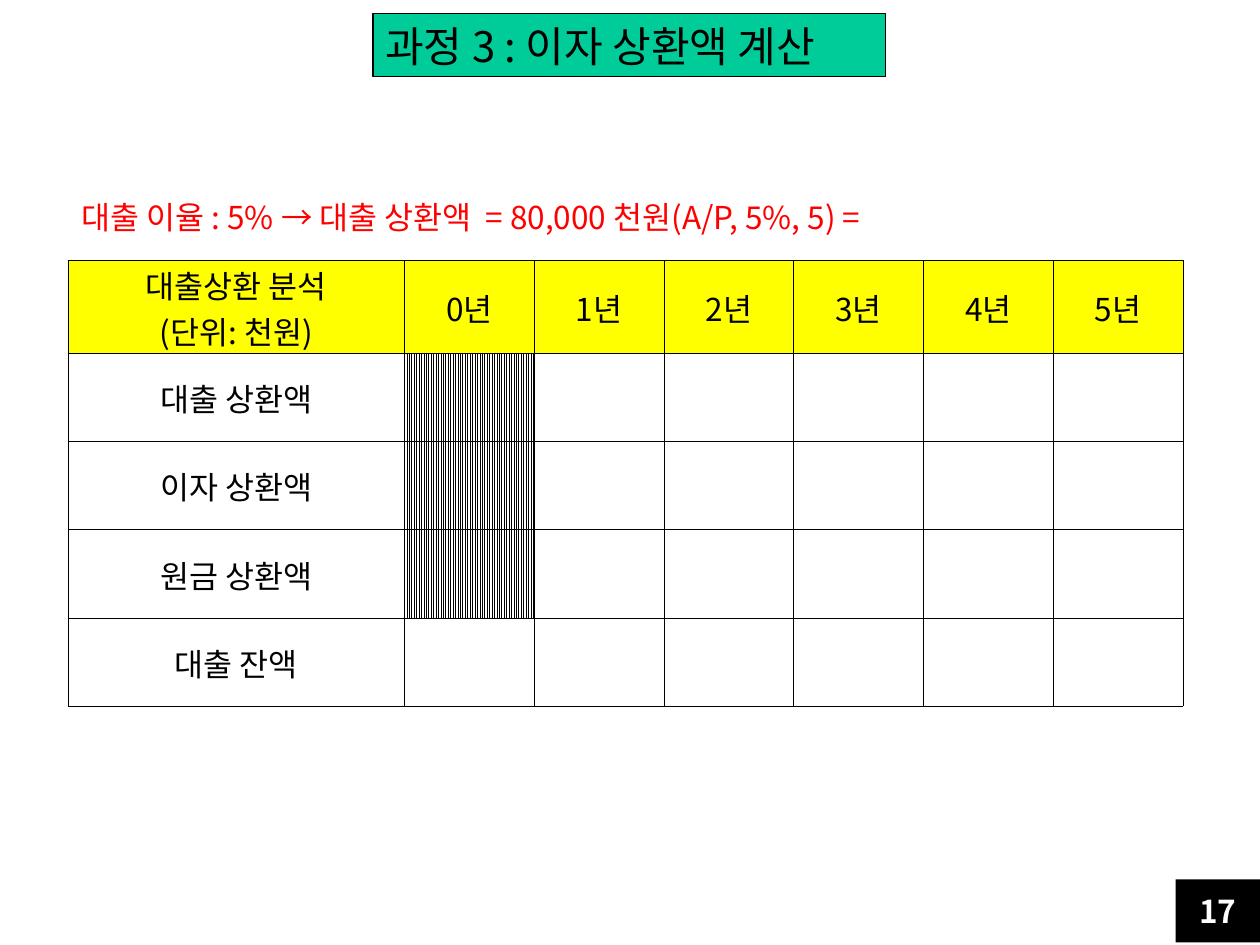
from pptx import Presentation
from pptx.dml.color import RGBColor
from pptx.enum.dml import MSO_PATTERN
from pptx.enum.shapes import MSO_SHAPE
from pptx.enum.text import MSO_ANCHOR, PP_ALIGN
from pptx.oxml import parse_xml
from pptx.oxml.ns import nsdecls
from pptx.util import Inches, Pt

FONT = "Noto Sans CJK KR"
BLACK = RGBColor(0x00, 0x00, 0x00)
WHITE = RGBColor(0xFF, 0xFF, 0xFF)
RED = RGBColor(0xFF, 0x00, 0x00)
YELLOW = RGBColor(0xFF, 0xFF, 0x00)
GREEN = RGBColor(0x00, 0xCC, 0x99)

YEARS = [f"{year}년" for year in range(6)]
HEADER = ["대출상환 분석\n(단위: 천원)"] + YEARS
ITEMS = ["대출 상환액", "이자 상환액", "원금 상환액", "대출 잔액"]
LABEL_WIDTH, YEAR_WIDTH, ROW_HEIGHT = 2.67, 1.03, 0.7


def write(frame, text, color=BLACK, size=18, align=PP_ALIGN.CENTER, bold=False):
    """Write one paragraph for each line of text."""
    for index, line in enumerate(text.split("\n")):
        para = frame.add_paragraph() if index else frame.paragraphs[0]
        para.alignment = align
        span = para.add_run()
        span.text = line
        font = span.font
        font.name, font.size, font.bold = FONT, Pt(size), bold
        font.color.rgb = color
        span._r.get_or_add_rPr().append(
            parse_xml(f'<a:ea {nsdecls("a")} typeface="{FONT}"/>'))


def add_panel(page, box, fill, outlined=False):
    """Add a filled rectangle and return its text frame."""
    panel = page.shapes.add_shape(MSO_SHAPE.RECTANGLE, *map(Inches, box))
    panel.shadow.inherit = False
    panel.fill.solid()
    panel.fill.fore_color.rgb = fill
    if outlined:
        panel.line.color.rgb = BLACK
        panel.line.width = Pt(0.75)
    else:
        panel.line.fill.background()
    return panel.text_frame


def add_title(page, box):
    frame = add_panel(page, box, GREEN, outlined=True)
    frame.vertical_anchor = MSO_ANCHOR.TOP
    write(frame, "과정 3 : 이자 상환액 계산", size=24, align=PP_ALIGN.LEFT)


def add_formula(page, box):
    frame = page.shapes.add_textbox(*map(Inches, box)).text_frame
    frame.word_wrap = True
    write(frame, "대출 이율 : 5% → 대출 상환액  = 80,000 천원(A/P, 5%, 5) =",
          color=RED, align=PP_ALIGN.LEFT)
    frame.paragraphs[0].line_spacing = 0.9


def add_page_number(page, box):
    frame = add_panel(page, box, BLACK)
    frame.vertical_anchor = MSO_ANCHOR.MIDDLE
    write(frame, "17", color=WHITE, bold=True)


def outline_cell(cell):
    """Draw a thin black border on all four sides."""
    properties = cell._tc.get_or_add_tcPr()
    for index, side in enumerate(("lnL", "lnR", "lnT", "lnB")):
        properties.insert(index, parse_xml(
            f'<a:{side} {nsdecls("a")} w="{Pt(0.5)}"><a:solidFill>'
            f'<a:srgbClr val="{BLACK}"/></a:solidFill></a:{side}>'))


def fill_cell(cell, row, column):
    """Yellow header, hatched year 0 for the payments, the rest clear."""
    fill = cell.fill
    if row == 0:
        fill.solid()
        fill.fore_color.rgb = YELLOW
    elif column == 1 and row < len(ITEMS):
        fill.patterned()
        fill.pattern = MSO_PATTERN.LIGHT_VERTICAL
        fill.fore_color.rgb = BLACK
        fill.back_color.rgb = WHITE
    else:
        fill.background()


def add_repayment_table(page, left, top):
    rows = [HEADER] + [[item] + [""] * len(YEARS) for item in ITEMS]
    widths = [LABEL_WIDTH] + [YEAR_WIDTH] * len(YEARS)
    size = sum(widths), ROW_HEIGHT * len(rows)
    table = page.shapes.add_table(len(rows), len(widths),
                                  *map(Inches, (left, top, *size))).table
    table.first_row = table.horz_banding = False
    for column, width in zip(table.columns, widths):
        column.width = Inches(width)
    for row, texts in enumerate(rows):
        table.rows[row].height = Inches(ROW_HEIGHT)
        for column, text in enumerate(texts):
            cell = table.cell(row, column)
            cell.vertical_anchor = MSO_ANCHOR.MIDDLE
            cell.margin_left = cell.margin_right = cell.margin_top = Inches(0.01)
            cell.margin_bottom = 0
            if text:
                write(cell.text_frame, text)
            fill_cell(cell, row, column)
            outline_cell(cell)


def main():
    deck = Presentation()
    deck.slide_width, deck.slide_height = Inches(10), Inches(7.5)
    page = deck.slides.add_slide(deck.slide_layouts[6])
    add_repayment_table(page, 0.54, 2.07)
    add_formula(page, (0.55, 1.56, 6.94, 0.37))
    add_title(page, (2.96, 0.11, 4.07, 0.5))
    add_page_number(page, (9.33, 6.98, 0.67, 0.5))
    deck.save("out.pptx")


if __name__ == "__main__":
    main()
